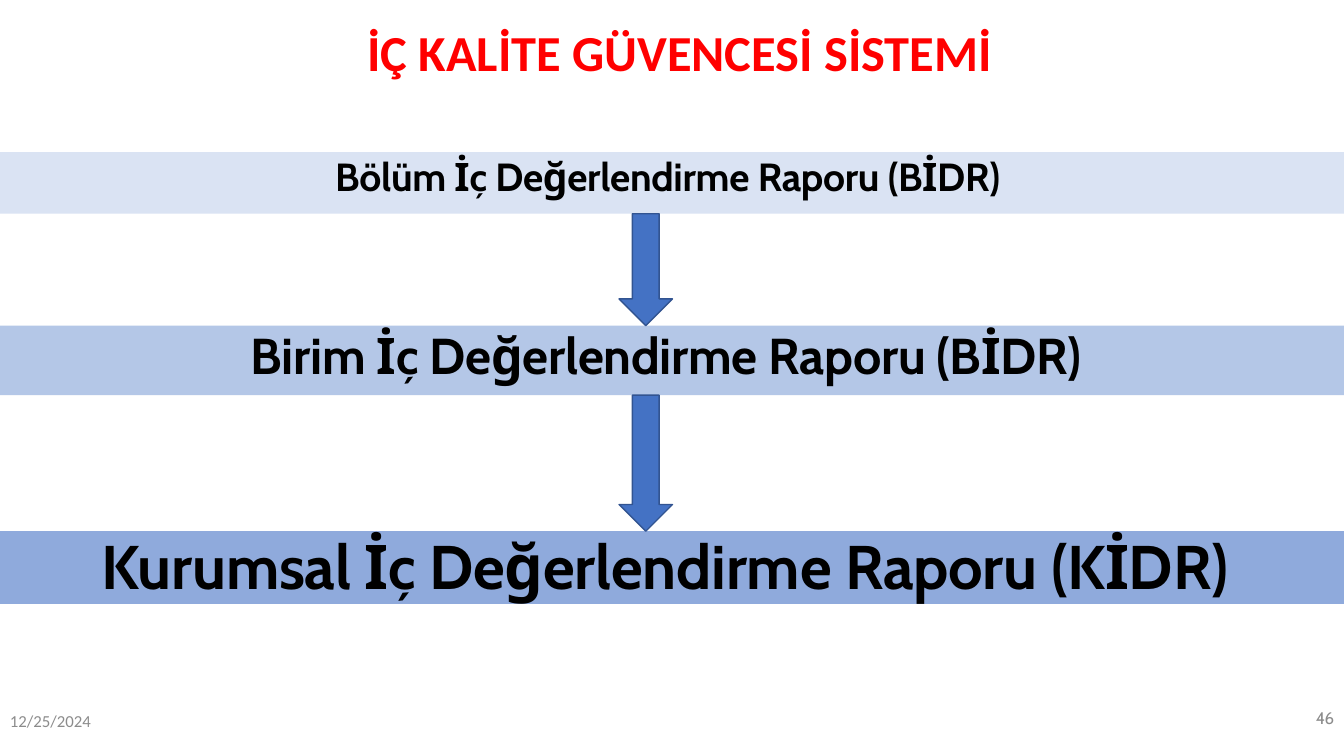
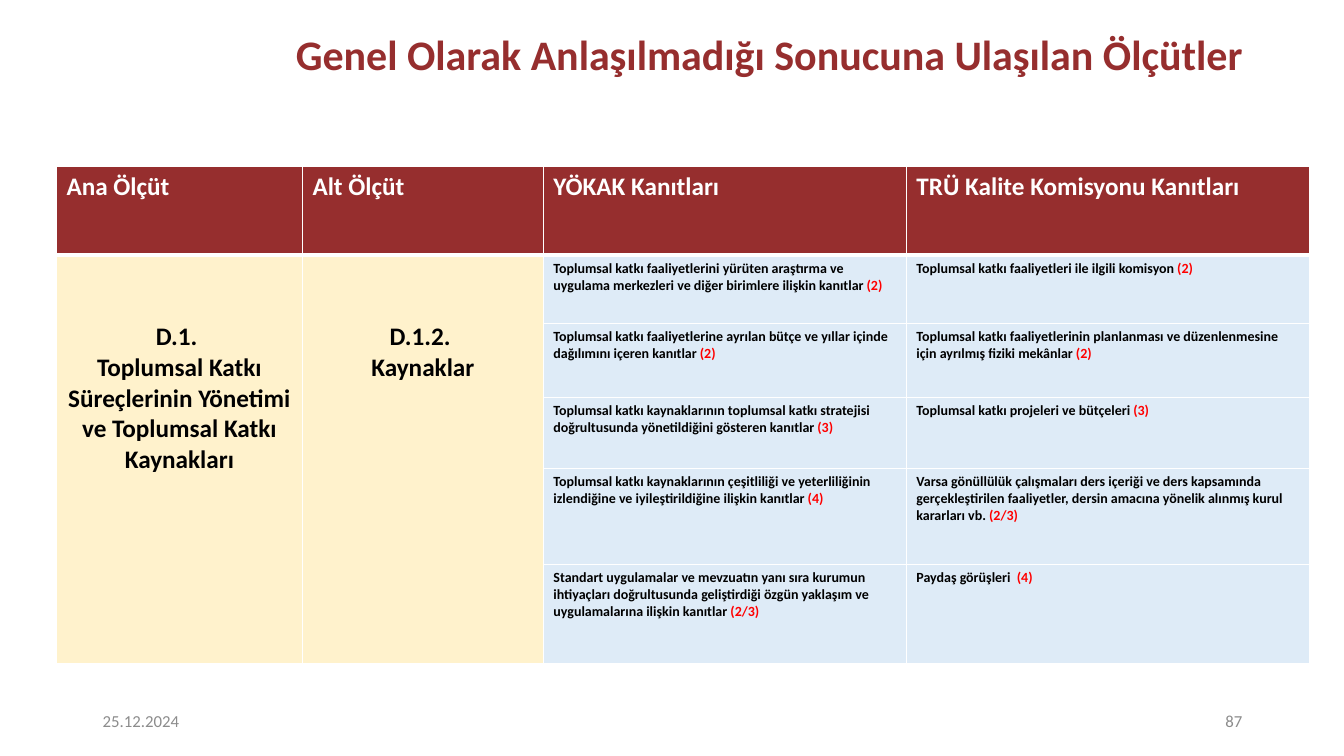
from lxml import etree
from pptx import Presentation
from pptx.dml.color import RGBColor
from pptx.enum.shapes import MSO_SHAPE
from pptx.enum.text import MSO_ANCHOR, PP_ALIGN
from pptx.oxml.ns import qn
from pptx.util import Inches, Pt

LEFT, CENTER, RIGHT = PP_ALIGN.LEFT, PP_ALIGN.CENTER, PP_ALIGN.RIGHT
MIDDLE, TOP = MSO_ANCHOR.MIDDLE, MSO_ANCHOR.TOP
RECT, ARROW = MSO_SHAPE.RECTANGLE, MSO_SHAPE.DOWN_ARROW

BODY, ALT = "Calibri", "Cabin"
WHITE, BLACK, RED, GRAY = "FFFFFF", "000000", "FF0000", "8C8C8C"
MAROON, CREAM, PALE = "962E2E", "FFF2CC", "DEEBF7"
BLUE, NAVY = "4472C4", "325491"
WIDE = 13.33


def style(par, size, color, bold=True, face=BODY, align=LEFT, track=0):
    """Format a paragraph and its runs; track is letter spacing in points."""
    par.alignment = align
    for run in par.runs:
        font = run.font
        font.size, font.bold, font.name = Pt(size), bold, face
        font.color.rgb = RGBColor.from_string(color)
        if track:
            run._r.get_or_add_rPr().set("spc", str(round(track * 100)))


def label(slide, at, text, *look, **more):
    """Add a one-line text box and return its paragraph."""
    frame = slide.shapes.add_textbox(*map(Inches, at)).text_frame
    frame.word_wrap = True
    frame.vertical_anchor = MIDDLE
    frame.text = text
    par = frame.paragraphs[0]
    style(par, *look, **more)
    return par


prs = Presentation()
prs.slide_width, prs.slide_height = Inches(WIDE), Inches(7.5)
blank = prs.slide_layouts[6]

# Titles and footers
pages = [
    ("İÇ KALİTE GÜVENCESİ SİSTEMİ ", (1.12, 0.24, 11.36, 0.62), 36, RED,
     "12/25/2024", 0, "46", 10.33, ALT, -0.5),
    ("Genel Olarak Anlaşılmadığı Sonucuna Ulaşılan Ölçütler",
     (1.94, 0.14, 11.39, 0.85), 30, MAROON,
     "25.12.2024", 0.92, "87", 9.42, BODY, 0),
]
slides, numbers = [], []
for title, at, size, color, date, date_x, num, num_x, face, track in pages:
    slide = prs.slides.add_slide(blank)
    head = label(slide, at, title, size, color, align=CENTER)
    head.line_spacing = 0.9
    label(slide, (date_x, 6.95, 3, 0.4), date, 12, GRAY, False)
    numbers.append(label(slide, (num_x, 6.95, 3, 0.4), num, 12, GRAY, False,
                         face, RIGHT, track))
    slides.append(slide)
flow, grid = slides
numbers[0].line_spacing = Pt(10.4)

# Report levels, each band pointing down to the next
bands = [
    ("Bölüm İç Değerlendirme Raporu (BİDR) ", 1.51, 0.61, "DAE3F3", 28),
    ("Birim İç Değerlendirme Raporu (BİDR) ", 3.23, 0.69, "B4C7E7", 36),
    ("Kurumsal İç Değerlendirme Raporu (KİDR) ", 5.27, 0.72, "8FAADC", 44),
]
for text, top, high, fill, size in bands:
    band = flow.shapes.add_shape(RECT, 0, Inches(top), Inches(WIDE),
                                 Inches(high))
    band.shadow.inherit = False
    band.fill.solid()
    band.fill.fore_color.rgb = RGBColor.from_string(fill)
    band.line.fill.background()
    frame = band.text_frame
    frame.vertical_anchor = TOP
    frame.text = text
    par = frame.paragraphs[0]
    style(par, size, BLACK, face=ALT, align=CENTER, track=-0.2)
    par.line_spacing = 0.9

for upper, lower in zip(bands, bands[1:]):
    start = upper[1] + upper[2]
    arrow = flow.shapes.add_shape(ARROW, Inches(6.14), Inches(start),
                                  Inches(0.53), Inches(lower[1] - start))
    arrow.shadow.inherit = False
    arrow.fill.solid()
    arrow.fill.fore_color.rgb = RGBColor.from_string(BLUE)
    arrow.line.color.rgb = RGBColor.from_string(NAVY)
    arrow.line.width = Pt(1)

# Criteria table
cols = [2.44, 2.39, 3.6, 4]
rows = [0.88, 0.68, 0.73, 0.71, 0.95, 0.98]
heads = ["Ana Ölçüt", "Alt Ölçüt", "YÖKAK Kanıtları",
         "TRÜ Kalite Komisyonu Kanıtları"]
topics = [
    "D.1. \nToplumsal Katkı Süreçlerinin Yönetimi ve Toplumsal Katkı "
    "Kaynakları",
    "D.1.2. \nKaynaklar",
]
proofs = [
    [("Toplumsal katkı faaliyetlerini yürüten araştırma ve uygulama "
      "merkezleri ve diğer birimlere ilişkin kanıtlar ", "(2)"),
     ("Toplumsal katkı faaliyetleri ile ilgili komisyon ", "(2)")],
    [("Toplumsal katkı faaliyetlerine ayrılan bütçe ve yıllar içinde "
      "dağılımını içeren kanıtlar ", "(2)"),
     ("Toplumsal katkı faaliyetlerinin planlanması ve düzenlenmesine için "
      "ayrılmış fiziki mekânlar ", "(2)")],
    [("Toplumsal katkı kaynaklarının toplumsal katkı stratejisi "
      "doğrultusunda yönetildiğini gösteren kanıtlar ", "(3)"),
     ("Toplumsal katkı projeleri ve bütçeleri ", "(3)")],
    [("Toplumsal katkı kaynaklarının çeşitliliği ve yeterliliğinin "
      "izlendiğine ve iyileştirildiğine ilişkin kanıtlar ", "(4)"),
     ("Varsa gönüllülük çalışmaları ders içeriği ve ders kapsamında "
      "gerçekleştirilen faaliyetler, dersin amacına yönelik alınmış kurul "
      "kararları vb. ", "(2/3)")],
    [("Standart uygulamalar ve mevzuatın yanı sıra kurumun ihtiyaçları "
      "doğrultusunda geliştirdiği özgün yaklaşım ve uygulamalarına ilişkin "
      "kanıtlar ", "(2/3)"),
     ("Paydaş görüşleri  ", "(4)")],
]

table = grid.shapes.add_table(
    len(rows), len(cols), Inches(0.56), Inches(1.65),
    Inches(sum(cols)), Inches(sum(rows))).table
for col, wide in zip(table.columns, cols):
    col.width = Inches(wide)
for row, high in zip(table.rows, rows):
    row.height = Inches(high)

for r in range(len(rows)):
    for c in range(len(cols)):
        cell = table.cell(r, c)
        props = cell._tc.get_or_add_tcPr()
        for side in ("lnL", "lnR", "lnT", "lnB"):
            thick = (r, side) in ((0, "lnB"), (1, "lnT"))
            edge = etree.SubElement(props, qn("a:" + side),
                                    w=str(Pt(3 if thick else 1)))
            paint = etree.SubElement(edge, qn("a:solidFill"))
            etree.SubElement(paint, qn("a:srgbClr"), val=WHITE)
        fill = MAROON if r == 0 else CREAM if c < 2 else PALE
        cell.fill.solid()
        cell.fill.fore_color.rgb = RGBColor.from_string(fill)

for c, text in enumerate(heads):
    cell = table.cell(0, c)
    cell.text_frame.text = text
    style(cell.text_frame.paragraphs[0], 18, WHITE)

for c, text in enumerate(topics):
    cell = table.cell(1, c)
    cell.merge(table.cell(len(rows) - 1, c))
    cell.margin_top = Inches(0.66)
    cell.text_frame.text = text
    for par in cell.text_frame.paragraphs:
        style(par, 18, BLACK, align=CENTER)

for r, pair in enumerate(proofs, 1):
    for c, (text, mark) in enumerate(pair, 2):
        par = table.cell(r, c).text_frame.paragraphs[0]
        par.text = text
        run = par.add_run()
        run.text = mark
        style(par, 10, BLACK)
        run.font.color.rgb = RGBColor.from_string(RED)

prs.save("out.pptx")
